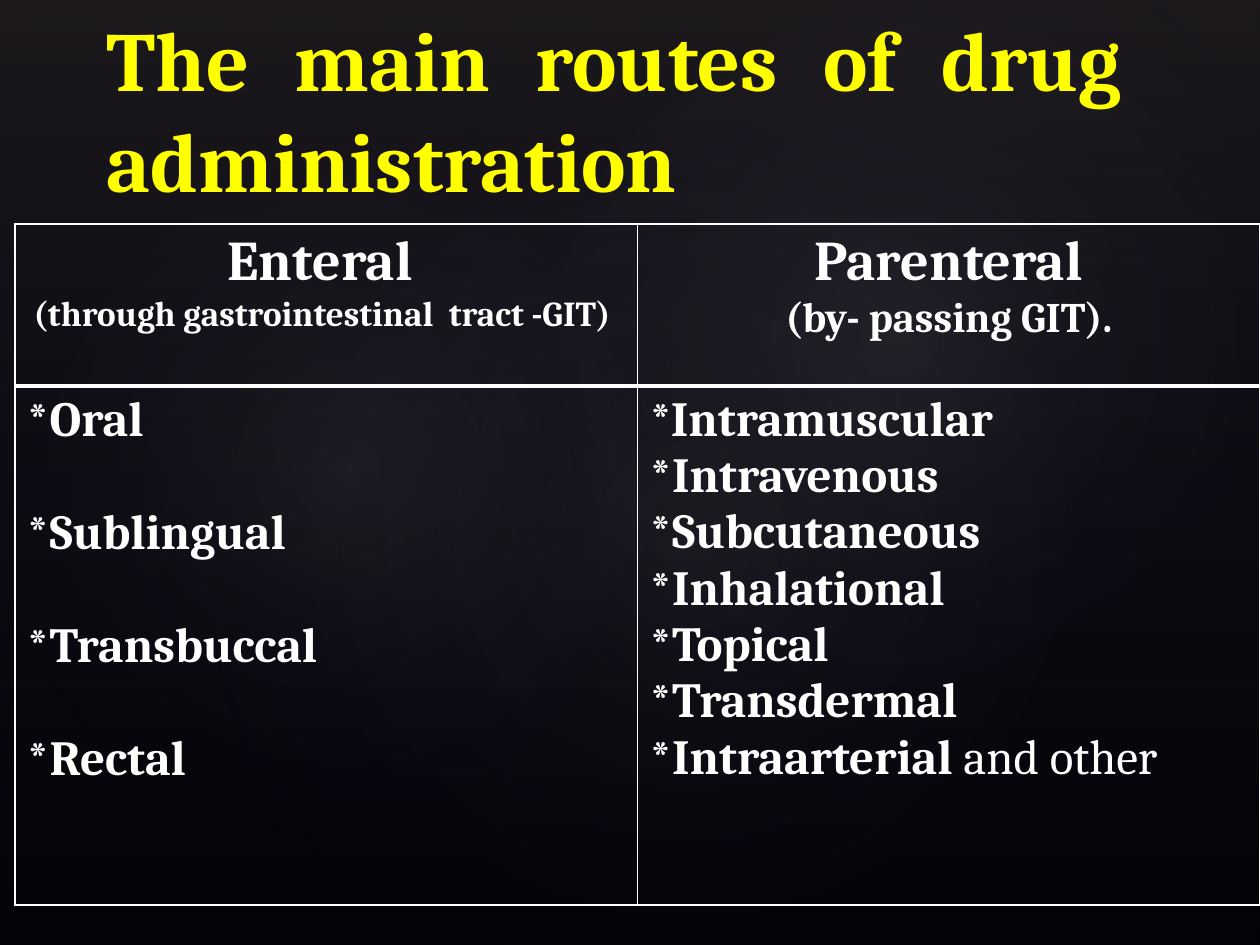
from lxml import etree
from pptx import Presentation
from pptx import util as u
from pptx.dml.color import RGBColor
from pptx.enum import shapes, text
from pptx.oxml import parse_xml
from pptx.oxml.ns import nsdecls, qn

COLOURS = {
    "background": "000000",
    "title": "FFFF00",
    "text": "FFFFFF",
    "border": "FFFFFF",
    "veil": "504652",
    "navy": "242852",
    "glow": "C4BCC6",
}
FONT = "Cambria"
THIN, THICK = 1, 3


class SlideBuilder:
    def __init__(self, slide):
        self.slide = slide

    def background(self, colour):
        fill = self.slide.background.fill
        fill.solid()
        fill.fore_color.rgb = RGBColor.from_string(COLOURS[colour])

    def gradient_shape(self, kind, box, stops, direction, rotation=0):
        """Add a borderless shape; stops are (position %, colour, opacity %)."""
        shape = self.slide.shapes.add_shape(kind, *map(u.Cm, box))
        shape.rotation = rotation
        shape.shadow.inherit = False
        shape.line.fill.background()
        stop_xml = "".join(
            f'<a:gs pos="{position * 1000}"><a:srgbClr val="{COLOURS[colour]}">'
            f'<a:alpha val="{opacity * 1000}"/></a:srgbClr></a:gs>'
            for position, colour, opacity in stops)
        gradient = parse_xml(
            f'<a:gradFill {nsdecls("a")} rotWithShape="1">'
            f"<a:gsLst>{stop_xml}</a:gsLst>{direction}</a:gradFill>")
        shape.element.spPr.find(qn("a:prstGeom")).addnext(gradient)

    def glow(self, box, rotation, opacity):
        centre = ('<a:path path="circle"><a:fillToRect l="50000" t="50000" '
                  'r="50000" b="50000"/></a:path>')
        self.gradient_shape(shapes.MSO_SHAPE.OVAL, box,
                            [(0, "glow", opacity), (58, "navy", 0)], centre, rotation)

    def run(self, paragraph, words, size, colour="text", bold=True):
        run = paragraph.add_run()
        run.text = words
        font = run.font
        font.name, font.size, font.bold = FONT, u.Pt(size), bold
        font.color.rgb = RGBColor.from_string(COLOURS[colour])

    def title(self, box, words):
        frame = self.slide.shapes.add_textbox(*map(u.Cm, box)).text_frame
        frame.word_wrap = True
        frame.vertical_anchor = text.MSO_ANCHOR.BOTTOM
        paragraph = frame.paragraphs[0]
        paragraph.alignment = text.PP_ALIGN.JUSTIFY
        self.run(paragraph, words, 48, "title")

    def table(self, box, heights, columns):
        left, top, width, height = map(u.Cm, box)
        table = self.slide.shapes.add_table(
            len(heights), len(columns), left, top, width, height).table
        for row, row_height in zip(table.rows, heights):
            row.height = u.Cm(row_height)
        for index, (heading, routes, gap) in enumerate(columns):
            table.columns[index].width = width // len(columns)
            self.cell(table.cell(0, index), heading, text.PP_ALIGN.CENTER, bottom=THICK)
            self.cell(table.cell(1, index), routes, text.PP_ALIGN.LEFT, gap, top=THICK)

    def cell(self, cell, lines, alignment, gap=0, top=THIN, bottom=THIN):
        """Fill a cell; each line is a list of (words, size, bold) runs."""
        cell.fill.background()
        frame = cell.text_frame
        for index, line in enumerate(lines):
            paragraph = frame.add_paragraph() if index else frame.paragraphs[0]
            paragraph.alignment = alignment
            if index and gap:
                paragraph.space_before = u.Pt(gap)
            for words, size, bold in line:
                self.run(paragraph, words, size, bold=bold)
        properties = cell._tc.get_or_add_tcPr()
        sides = {"L": THIN, "R": THIN, "T": top, "B": bottom}
        for position, (side, weight) in enumerate(sides.items()):
            border = etree.Element(qn(f"a:ln{side}"), w=str(u.Pt(weight)))
            fill = etree.SubElement(border, qn("a:solidFill"))
            etree.SubElement(fill, qn("a:srgbClr"), val=COLOURS["border"])
            properties.insert(position, border)


def main():
    presentation = Presentation()
    presentation.slide_width, presentation.slide_height = u.Cm(25.4), u.Cm(19.05)
    builder = SlideBuilder(presentation.slides.add_slide(presentation.slide_layouts[6]))

    builder.background("background")
    builder.gradient_shape(shapes.MSO_SHAPE.RECTANGLE, (0, 0, 25.4, 19.05),
                           [(0, "veil", 36), (100, "navy", 10)],
                           '<a:lin ang="5400000" scaled="0"/>')
    builder.glow((3.81, 2.9, 20.12, 15.85), 328.7, 7)
    builder.glow((-0.76, 3.25, 15.39, 12.45), 294.3, 8)
    builder.glow((9.09, 0.33, 18.01, 13.21), 328.7, 8)

    builder.title((1.9, 0.74, 20.96, 3.6), "The main routes of drug administration")

    enteral = ["Oral", "Sublingual", "Transbuccal", "Rectal"]
    parenteral = ["Intravenous", "Subcutaneous", "Inhalational", "Topical", "Transdermal"]

    def starred(names):
        return [[(f"*{name}", 28, True)] for name in names]

    builder.table((0.3, 4.52, 25.1, 13.72), (3.26, 10.46), [
        ([[("Enteral ", 32, True)],
          [("(through gastrointestinal  tract -GIT) ", 20, True)]],
         starred(enteral), 32.5),
        ([[("Parenteral", 32, True)], [(" (by- passing GIT). ", 24, True)]],
         [[("*", 28, False), ("Intramuscular", 28, True)],
          *starred(parenteral),
          [("*Intraarterial ", 28, True), ("and other", 28, False)]], 0),
    ])
    presentation.save("out.pptx")


if __name__ == "__main__":
    main()
